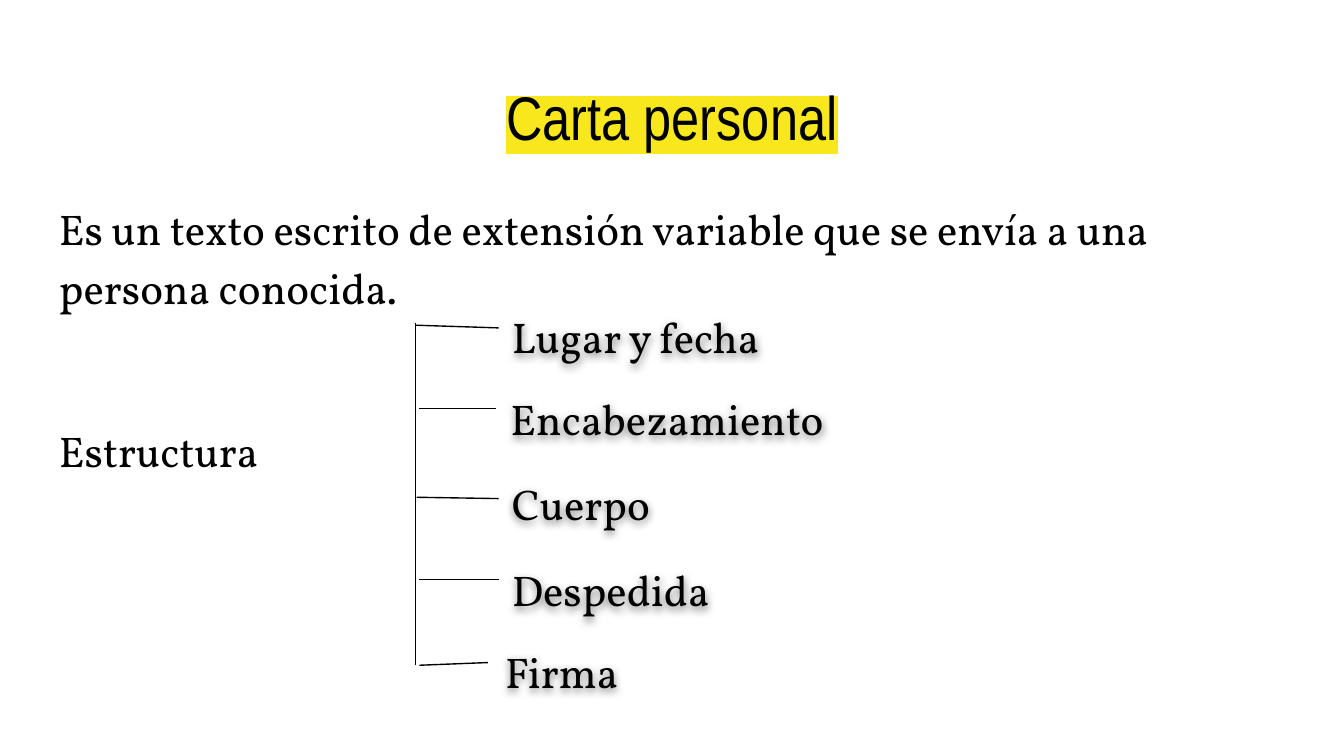
from dataclasses import dataclass

from lxml import etree
from pptx import Presentation
from pptx import util as u
from pptx.dml.color import RGBColor
from pptx.enum import shapes, text
from pptx.oxml.ns import qn

PX = 9144


@dataclass(frozen=True)
class Theme:
    ink: str = "000000"
    marker: str = "F8E71C"
    paper: str = "FFFFFF"
    title_font: str = "Arial Narrow"
    body_font: str = "Vollkorn"
    title_size: int = 33
    body_size: int = 23
    line_width: float = 0.75


THEME = Theme()

BRANCHES = [
    ((309, 242), (371, 244)),
    ((312, 304), (369, 304)),
    ((310, 370), (371, 371)),
    ((312, 431), (371, 431)),
    ((312, 495), (363, 493)),
]

LABELS = [
    ("Lugar y fecha", 371, 221, 393),
    ("Encabezamiento", 370, 282, 473),
    ("Cuerpo", 371, 345, 175),
    ("Despedida", 371, 409, 458),
    ("Firma", 366, 470, 198),
]


def px(n):
    return u.Emu(n * PX)


def place(sp, left, top, width, height):
    sp.left, sp.top, sp.width, sp.height = map(px, (left, top, width, height))


def frame(sp, fit=text.MSO_AUTO_SIZE.NONE):
    tf = sp.text_frame
    tf.word_wrap = True
    tf.auto_size = fit
    tf.vertical_anchor = text.MSO_ANCHOR.TOP
    tf.margin_left = tf.margin_right = tf.margin_top = tf.margin_bottom = px(10)
    return tf


def write(p, words, font=THEME.body_font, size=THEME.body_size, highlight=None,
          align=text.PP_ALIGN.LEFT, spacing=1.0, before=0, after=0):
    p.alignment, p.line_spacing = align, spacing
    p.space_before, p.space_after = u.Pt(before), u.Pt(after)
    r = p.add_run()
    r.text = words
    r.font.name, r.font.size = font, u.Pt(size)
    r.font.color.rgb = RGBColor.from_string(THEME.ink)
    if highlight:
        fill = r.font._element.find(qn("a:solidFill"))
        mark = etree.Element(qn("a:highlight"))
        etree.SubElement(mark, qn("a:srgbClr"), val=highlight)
        fill.addnext(mark)


def add_title(s, words):
    sp = s.shapes.title
    place(sp, 34, 49, 932, 63)
    write(frame(sp).paragraphs[0], words, font=THEME.title_font,
          size=THEME.title_size, highlight=THEME.marker,
          align=text.PP_ALIGN.CENTER)


def add_body(s, definition, heading):
    sp = s.shapes.add_textbox(0, 0, 0, 0)
    place(sp, 34, 135, 932, 365)
    tf = frame(sp)
    write(tf.paragraphs[0], definition, spacing=1.15)
    write(tf.add_paragraph(), heading, spacing=1.15, before=55.5, after=12)


def add_shadow(sp):
    effects = etree.SubElement(sp._element.spPr, qn("a:effectLst"))
    shadow = etree.SubElement(effects, qn("a:outerShdw"), blurRad="57150",
                              dist="19050", dir="5400000", algn="bl",
                              rotWithShape="0")
    color = etree.SubElement(shadow, qn("a:srgbClr"), val=THEME.ink)
    etree.SubElement(color, qn("a:alpha"), val="50000")


def add_label(s, words, left, top, width):
    sp = s.shapes.add_textbox(0, 0, 0, 0)
    place(sp, left, top, width, 59)
    write(frame(sp, text.MSO_AUTO_SIZE.SHAPE_TO_FIT_TEXT).paragraphs[0], words)
    add_shadow(sp)


def add_line(s, start, end):
    cn = s.shapes.add_connector(shapes.MSO_CONNECTOR.STRAIGHT,
                                *map(px, start + end))
    cn.line.color.rgb = RGBColor.from_string(THEME.ink)
    cn.line.width = u.Pt(THEME.line_width)
    etree.SubElement(cn._element.spPr, qn("a:effectLst"))


def main():
    prs = Presentation()
    prs.slide_width = px(1000)
    prs.slide_height = prs.slide_width * 9 // 16
    s = prs.slides.add_slide(prs.slide_layouts[5])
    s.background.fill.solid()
    s.background.fill.fore_color.rgb = RGBColor.from_string(THEME.paper)
    add_title(s, "Carta personal")
    add_body(s, "Es un texto escrito de extensión variable que se envía a una "
                "persona conocida.", "Estructura")
    add_line(s, (309, 240), (309, 495))
    for start, end in BRANCHES:
        add_line(s, start, end)
    for label in LABELS:
        add_label(s, *label)
    prs.save("out.pptx")


if __name__ == "__main__":
    main()
